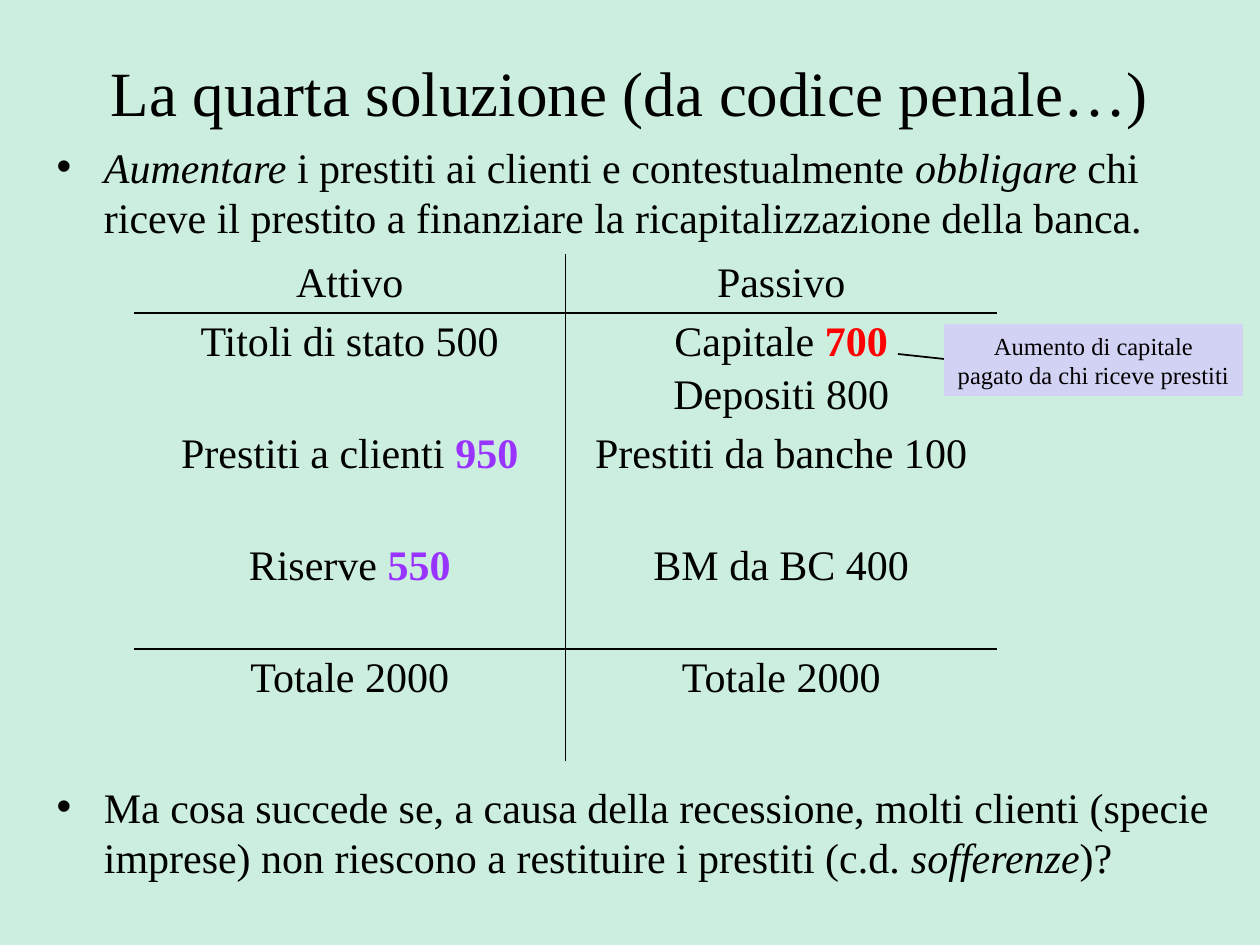
import dataclasses

import lxml.etree
import pptx
import pptx.dml.color
import pptx.enum.shapes
import pptx.enum.text
import pptx.oxml
import pptx.oxml.ns
import pptx.util

EMU_PER_PX = 914400 / 126
ALIGN = pptx.enum.text.PP_ALIGN
ANCHOR = pptx.enum.text.MSO_ANCHOR
NO_STYLE = "{2D5ABB26-0587-4C30-8999-92F81FD0307C}"


@dataclasses.dataclass(frozen=True)
class Theme:
    """Colours, font and type sizes of the slide."""
    font: str = "Times New Roman"
    background: str = "CCEEDF"
    ink: str = "000000"
    raised: str = "FF0000"
    lent: str = "9933FF"
    note: str = "D2D2F4"
    title_size: int = 36
    body_size: int = 24
    note_size: int = 14
    space_before: float = 3.5
    line_width: int = 1


THEME = Theme()
BALANCE_SHEET = [
    ([["Attivo"]], [["Passivo"]]),
    ([["Titoli di stato 500"]],
     [["Capitale ", ("700", {"bold": True, "color": THEME.raised})], ["Depositi 800"]]),
    ([["Prestiti a clienti ", ("950", {"bold": True, "color": THEME.lent})]],
     [["Prestiti da banche 100"]]),
    ([["Riserve ", ("550", {"bold": True, "color": THEME.lent})]], [["BM da BC 400"]]),
    ([["Totale 2000"]], [["Totale 2000"]]),
]
ITALIC = {"italic": True}


def px(*lengths):
    """Turn pixel lengths into EMU."""
    return [pptx.util.Emu(round(length * EMU_PER_PX)) for length in lengths]


def rgb(color):
    """Return the colour object for a hex value."""
    return pptx.dml.color.RGBColor.from_string(color)


def add_run(paragraph, text, size, color=THEME.ink, bold=False, italic=False):
    """Add one formatted run to a paragraph."""
    run = paragraph.add_run()
    run.text = text
    font = run.font
    font.name, font.size = THEME.font, pptx.util.Pt(size)
    font.bold, font.italic = bold, italic
    font.color.rgb = rgb(color)


def write_text(frame, paragraphs, size=THEME.body_size, align=ALIGN.CENTER,
               space_before=THEME.space_before):
    """Fill a text frame with paragraphs made of plain or formatted runs."""
    for index, runs in enumerate(paragraphs):
        paragraph = frame.add_paragraph() if index else frame.paragraphs[0]
        paragraph.alignment = align
        paragraph.space_before = pptx.util.Pt(space_before)
        for run in runs:
            text, style = (run, {}) if isinstance(run, str) else run
            add_run(paragraph, text, size, **style)


def fill_placeholder(shape, box, paragraphs, **text_format):
    """Place a template placeholder and write its text."""
    shape.left, shape.top, shape.width, shape.height = px(*box)
    shape.text_frame.auto_size = pptx.enum.text.MSO_AUTO_SIZE.NONE
    write_text(shape.text_frame, paragraphs, **text_format)


def set_borders(cell, shown):
    """Draw the named sides of a cell and clear the others."""
    properties = cell._tc.get_or_add_tcPr()
    width = str(pptx.util.Pt(THEME.line_width))
    for position, side in enumerate(("lnL", "lnR", "lnT", "lnB")):
        line = pptx.oxml.parse_xml(
            f'<a:{side} {pptx.oxml.ns.nsdecls("a")} w="{width}"/>')
        if side in shown:
            fill = lxml.etree.SubElement(line, pptx.oxml.ns.qn("a:solidFill"))
            lxml.etree.SubElement(fill, pptx.oxml.ns.qn("a:srgbClr"), val=THEME.ink)
        else:
            lxml.etree.SubElement(line, pptx.oxml.ns.qn("a:noFill"))
        properties.insert(position, line)


def add_balance_sheet(slide, box, header_height, row_height):
    """Add the two-sided account with its ruled header and total."""
    last = len(BALANCE_SHEET) - 1
    table = slide.shapes.add_table(last + 1, 2, *px(*box)).table
    table.first_row = table.horz_banding = False
    table._tbl.tblPr.find(pptx.oxml.ns.qn("a:tableStyleId")).text = NO_STYLE
    for row_index, entries in enumerate(BALANCE_SHEET):
        table.rows[row_index].height = px(row_height if row_index else header_height)[0]
        for column_index, paragraphs in enumerate(entries):
            cell = table.cell(row_index, column_index)
            cell.fill.background()
            write_text(cell.text_frame, paragraphs)
            shown = {"lnL" if column_index else "lnR"}
            if row_index in (0, last - 1):
                shown.add("lnB")
            if row_index in (1, last):
                shown.add("lnT")
            set_borders(cell, shown)


def add_note(slide, box, paragraphs):
    """Add a filled note without outline."""
    shape = slide.shapes.add_shape(pptx.enum.shapes.MSO_SHAPE.RECTANGLE, *px(*box))
    shape.shadow.inherit = False
    shape.fill.solid()
    shape.fill.fore_color.rgb = rgb(THEME.note)
    shape.line.fill.background()
    shape.text_frame.word_wrap = False
    shape.text_frame.vertical_anchor = ANCHOR.MIDDLE
    write_text(shape.text_frame, paragraphs, size=THEME.note_size, space_before=0)


def add_line(slide, ends):
    """Add a straight line without shadow."""
    line = slide.shapes.add_connector(
        pptx.enum.shapes.MSO_CONNECTOR.STRAIGHT, *px(*ends))
    line.line.color.rgb = rgb(THEME.ink)
    line.line.width = pptx.util.Pt(THEME.line_width)
    lxml.etree.SubElement(line._element.spPr, pptx.oxml.ns.qn("a:effectLst"))


def main():
    """Build and save the slide."""
    presentation = pptx.Presentation()
    presentation.slide_width, presentation.slide_height = px(1260, 945)
    slide = presentation.slides.add_slide(presentation.slide_layouts[1])
    slide.background.fill.solid()
    slide.background.fill.fore_color.rgb = rgb(THEME.background)

    fill_placeholder(slide.shapes.title, (94, 27, 1071, 128),
                     [["La quarta soluzione (da codice penale…)"]],
                     size=THEME.title_size, space_before=0)
    body = slide.placeholders[1]
    fill_placeholder(body, (44, 135, 1198, 784), [
        [("Aumentare", ITALIC), " i prestiti ai clienti e contestualmente ",
         ("obbligare", ITALIC),
         " chi riceve il prestito a finanziare la ricapitalizzazione della banca."],
        ["Ma cosa succede se, a causa della recessione, molti clienti (specie imprese) "
         "non riescono a restituire i prestiti (c.d. ", ("sofferenze", ITALIC), ")?"],
    ], align=ALIGN.LEFT)
    body.text_frame.paragraphs[1].space_before = pptx.util.Pt(308)

    add_balance_sheet(slide, (134, 254, 863, 506), header_height=58, row_height=112)
    add_note(slide, (944, 324, 299, 72),
             [["Aumento di capitale"], ["pagato da chi riceve prestiti"]])
    add_line(slide, (944, 359, 898, 354))
    presentation.save("out.pptx")


if __name__ == "__main__":
    main()
